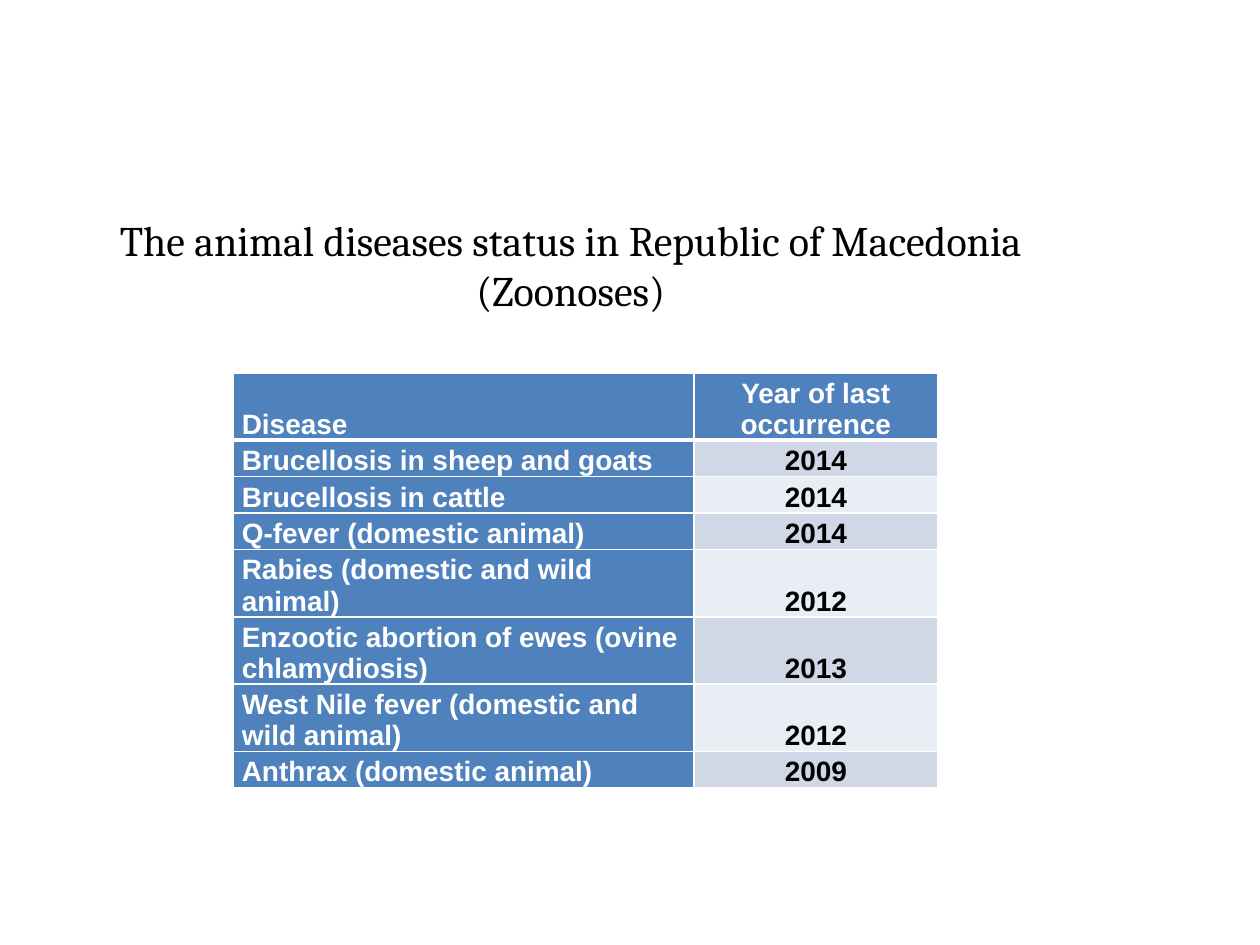
import lxml.etree
import pptx
import pptx.dml.color
import pptx.enum.text
import pptx.oxml.ns
import pptx.util

Inches = pptx.util.Inches
Align = pptx.enum.text.PP_ALIGN
Anchor = pptx.enum.text.MSO_ANCHOR

WHITE, BLACK, BLUE = "FFFFFF", "000000", "4F81BD"
BANDS = ("D0D8E8", "E9EDF4")
ONE_LINE, TWO_LINES = 0.29, 0.5
COLUMN_WIDTHS = (3.66, 1.93)
ROWS = (
    ("Disease", "Year of last occurrence", TWO_LINES),
    ("Brucellosis in sheep and goats", "2014", ONE_LINE),
    ("Brucellosis in cattle", "2014", ONE_LINE),
    ("Q-fever (domestic animal)", "2014", ONE_LINE),
    ("Rabies (domestic and wild animal)", "2012", TWO_LINES),
    ("Enzootic abortion of ewes (ovine chlamydiosis)", "2013", TWO_LINES),
    ("West Nile fever (domestic and wild animal)", "2012", TWO_LINES),
    ("Anthrax (domestic animal)", "2009", ONE_LINE),
)


def color(value):
    """Turn a hex string into a colour."""
    return pptx.dml.color.RGBColor.from_string(value)


def write(frame, text, size, font, ink, bold=False, align=Align.LEFT):
    """Fill a text frame with one formatted paragraph."""
    para = frame.paragraphs[0]
    para.text = text
    para.alignment = align
    for span in para.runs:
        span.font.size = pptx.util.Pt(size)
        span.font.name = font
        span.font.bold = bold
        span.font.color.rgb = color(ink)


def add_border(cell, side, width):
    """Draw a white line on one side of a cell."""
    properties = cell._tc.get_or_add_tcPr()
    line = lxml.etree.SubElement(properties, pptx.oxml.ns.qn("a:ln" + side))
    line.set("w", str(pptx.util.Pt(width)))
    fill = lxml.etree.SubElement(line, pptx.oxml.ns.qn("a:solidFill"))
    lxml.etree.SubElement(fill, pptx.oxml.ns.qn("a:srgbClr")).set("val", WHITE)


def style_cell(cell, row, column):
    """Set the margins, borders and fill of a cell by its place."""
    cell.margin_left = cell.margin_right = Inches(0.07)
    cell.margin_top = cell.margin_bottom = 0
    cell.vertical_anchor = Anchor.BOTTOM
    for side in "LRTB":
        under_header = (row, side) in ((0, "B"), (1, "T"))
        add_border(cell, side, 3 if under_header else 1)
    cell.fill.solid()
    is_heading = row == 0 or column == 0
    cell.fill.fore_color.rgb = color(BLUE if is_heading else BANDS[(row - 1) % 2])


def add_title(page, left, top, width, height):
    """Place the centred title in the given box."""
    box = page.shapes.add_textbox(Inches(left), Inches(top), Inches(width), Inches(height))
    frame = box.text_frame
    frame.word_wrap = True
    frame.vertical_anchor = Anchor.MIDDLE
    write(frame, "The animal diseases status in Republic of Macedonia\n(Zoonoses)",
          24, "Cambria", BLACK, align=Align.CENTER)


def add_disease_table(page, left, top):
    """Place the table of diseases and years with its corner at the given point."""
    width, height = sum(COLUMN_WIDTHS), sum(row[-1] for row in ROWS)
    table = page.shapes.add_table(len(ROWS), len(COLUMN_WIDTHS), Inches(left), Inches(top),
                                  Inches(width), Inches(height)).table
    for column, column_width in enumerate(COLUMN_WIDTHS):
        table.columns[column].width = Inches(column_width)
    for row, (disease, year, row_height) in enumerate(ROWS):
        table.rows[row].height = Inches(row_height)
        for column, text in enumerate((disease, year)):
            cell = table.cell(row, column)
            style_cell(cell, row, column)
            write(cell.text_frame, text, 16, "Arial", BLACK if row and column else WHITE,
                  bold=True, align=Align.CENTER if column else Align.LEFT)


def main():
    """Build the slide and save it."""
    deck = pptx.Presentation()
    deck.slide_width, deck.slide_height = Inches(10), Inches(7.5)
    page = deck.slides.add_slide(deck.slide_layouts[6])
    add_title(page, 0.43, 1.55, 8.2, 1.1)
    add_disease_table(page, 1.85, 2.96)
    deck.save("out.pptx")


if __name__ == "__main__":
    main()
